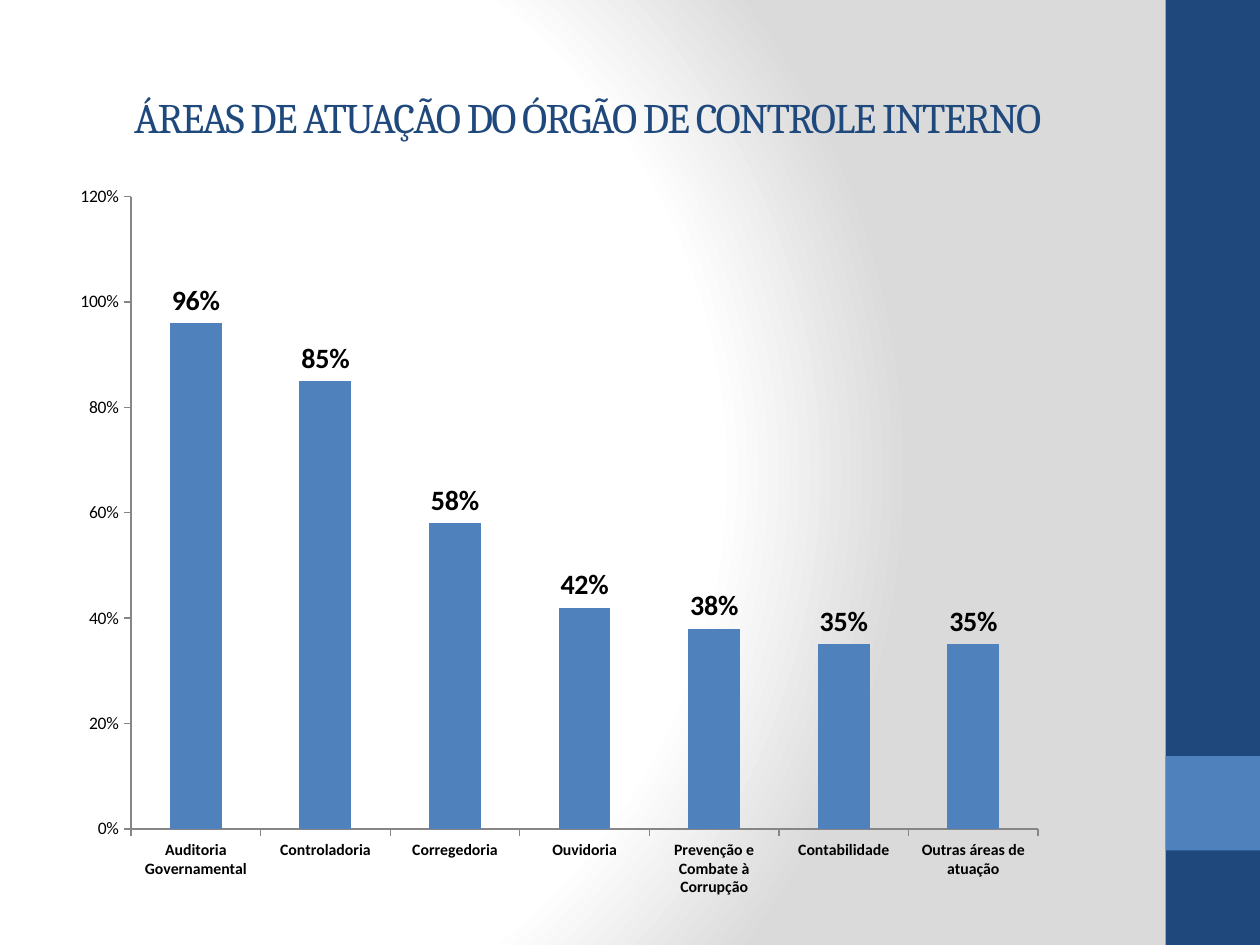
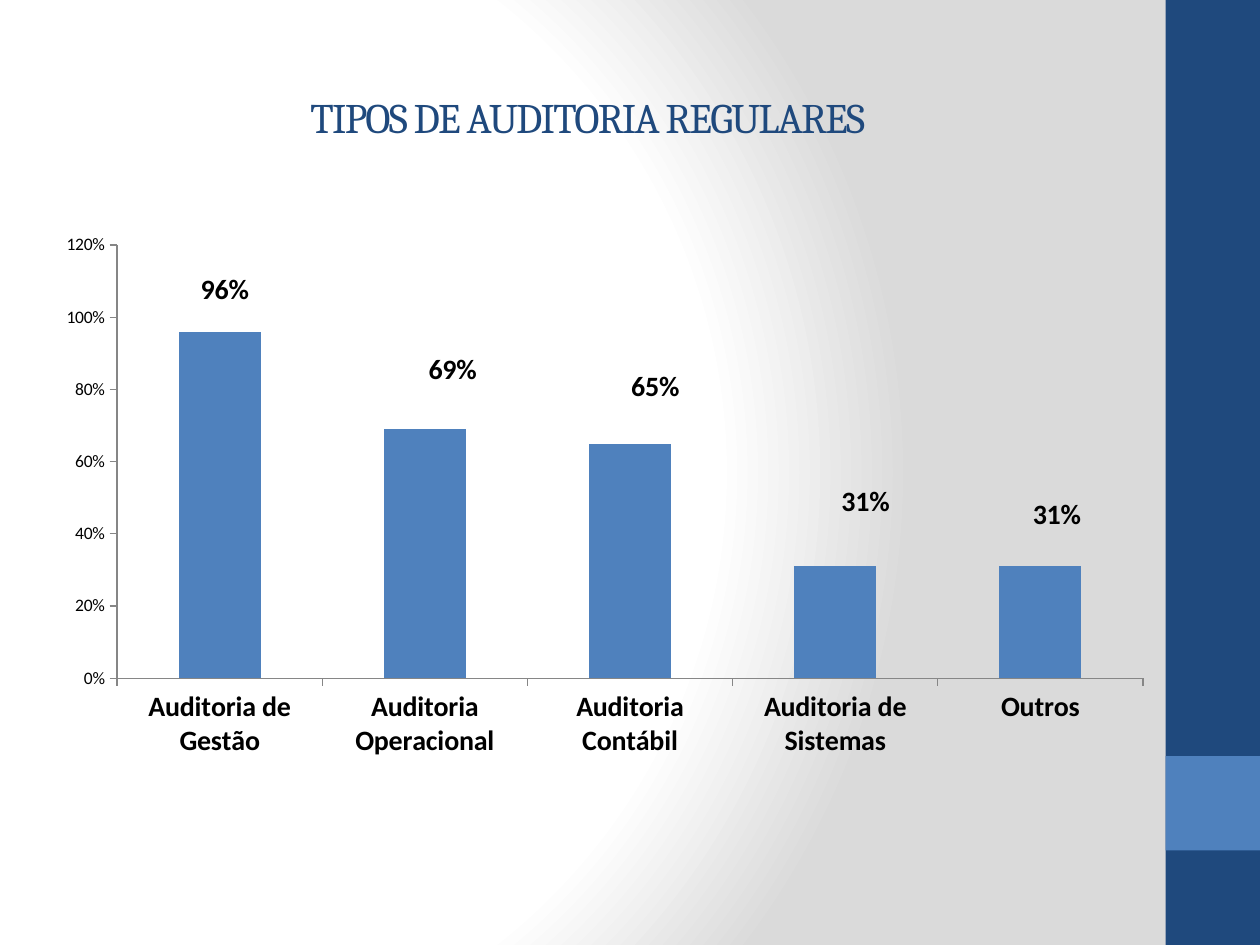
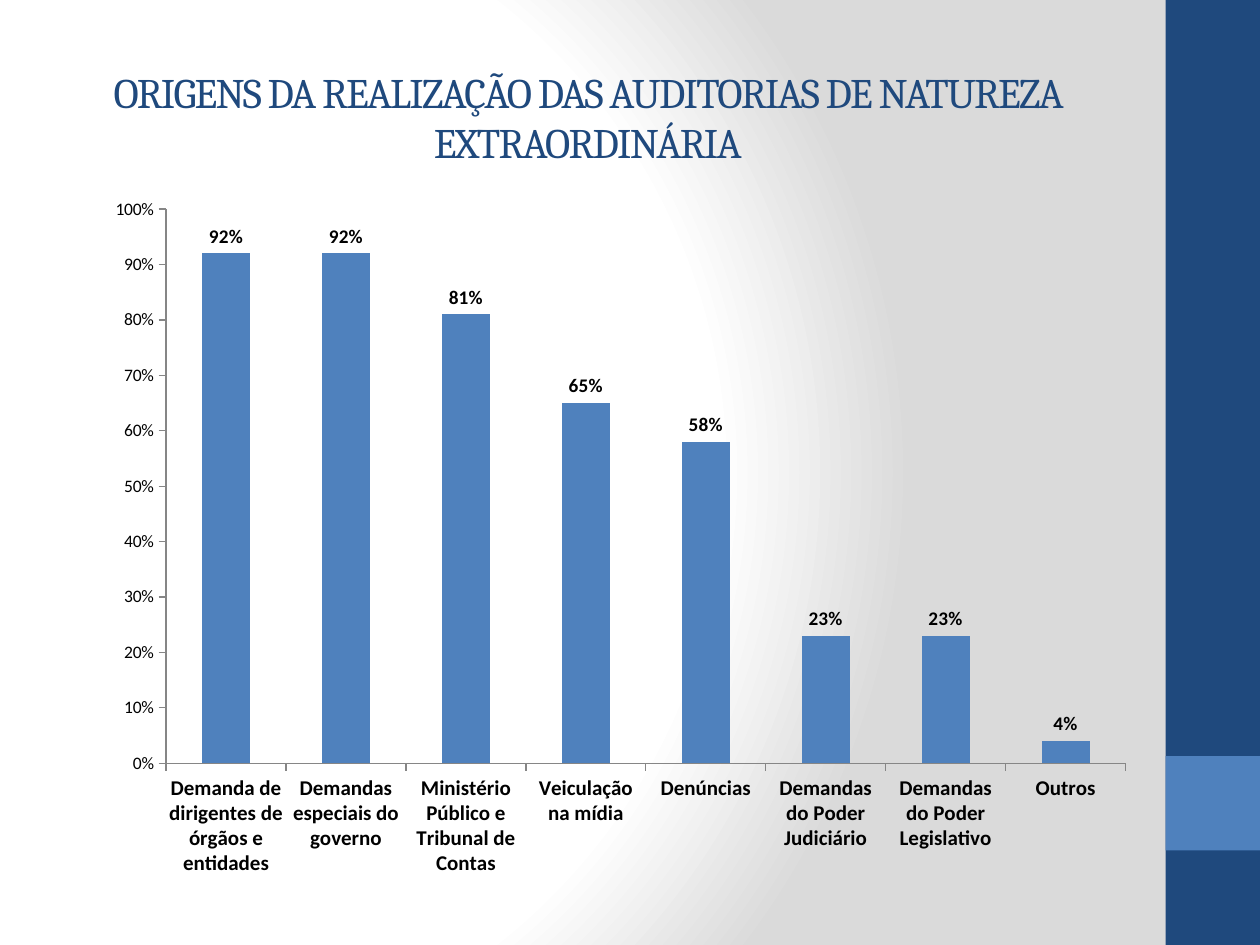
import pptx
import pptx.chart.data
import pptx.dml.color
import pptx.enum.chart
import pptx.enum.shapes
import pptx.enum.text
import pptx.oxml
import pptx.oxml.ns
import pptx.util
from dataclasses import dataclass

Inches = pptx.util.Inches
Pt = pptx.util.Pt
qn = pptx.oxml.ns.qn
NAMESPACES = pptx.oxml.ns.nsdecls


@dataclass(frozen=True)
class Theme:
    navy: str = "1F497D"
    blue: str = "4F81BD"
    axis: str = "868686"
    ink: str = "000000"
    paper: str = "FFFFFF"
    shade: str = "DADADA"
    title_font: str = "Cambria"
    chart_font: str = "Calibri"
    title_size: int = 24
    title_tracking: int = -100
    tick_size: int = 10


THEME = Theme()
SLIDE_SIZE = (10, 7.5)
TITLE_BOX = (0.5, 0.3, 8.33, 1.25)
BAND_BOX = (9.25, 0, 0.75, 7.5)

# Boxes, plot areas and label shifts are in inches; sizes are in points.
CHART_PAGES = [
    {
        "title": "ÁREAS DE ATUAÇÃO DO ÓRGÃO DE CONTROLE INTERNO",
        "box": (0.51, 1.39, 7.89, 5.83),
        "bars": {
            "Auditoria Governamental": 0.96,
            "Controladoria": 0.85,
            "Corregedoria": 0.58,
            "Ouvidoria": 0.42,
            "Prevenção e Combate à Corrupção": 0.38,
            "Contabilidade": 0.35,
            "Outras áreas de atuação": 0.35,
        },
        "scale": (1.2, 0.2),
        "category_size": 9,
        "label_size": 16,
        "plot_box": (0.53, 0.17, 7.2, 5.02),
    },
    {
        "title": "TIPOS DE AUDITORIA REGULARES",
        "box": (0.35, 1.78, 8.9, 4.33),
        "bars": {
            "Auditoria de Gestão": 0.96,
            "Auditoria Operacional": 0.69,
            "Auditoria Contábil": 0.65,
            "Auditoria de Sistemas": 0.31,
            "Outros": 0.31,
        },
        "scale": (1.2, 0.2),
        "category_size": 16,
        "label_size": 16,
        "label_shifts": [(0.04, -0.15), (0.22, -0.29), (0.2, -0.27),
                         (0.24, -0.33), (0.13, -0.23)],
    },
    {
        "title": "ORIGENS DA REALIZAÇÃO DAS AUDITORIAS DE NATUREZA EXTRAORDINÁRIA",
        "box": (0.75, 1.47, 8.35, 5.59),
        "bars": {
            "Demanda de dirigentes de órgãos e entidades": 0.92,
            "Demandas especiais do governo": 0.92,
            "Ministério Público e Tribunal de Contas": 0.81,
            "Veiculação na mídia": 0.65,
            "Denúncias": 0.58,
            "Demandas do Poder Judiciário": 0.23,
            "Demandas do Poder Legislativo": 0.23,
            "Outros": 0.04,
        },
        "scale": (1, 0.1),
        "category_size": 12,
        "label_size": 11,
    },
]


def apply(target, formats):
    for name, value in formats.items():
        setattr(target, name, value)


def color(code):
    return pptx.dml.color.RGBColor.from_string(code)


def inches(box):
    return [Inches(length) for length in box]


def style_font(font, size, face=THEME.chart_font, ink=THEME.ink, bold=False):
    apply(font, {"name": face, "size": Pt(size), "bold": bold})
    font.color.rgb = color(ink)


# Shared background
def set_background(master):
    stops = [(0, THEME.paper), (75, THEME.paper), (100, THEME.shade)]
    stop_xml = "".join(
        f'<a:gs pos="{place * 1000}"><a:srgbClr val="{code}"/></a:gs>'
        for place, code in stops)
    background = pptx.oxml.parse_xml(
        f'<p:bg {NAMESPACES("p", "a")}><p:bgPr><a:gradFill rotWithShape="1">'
        f'<a:gsLst>{stop_xml}</a:gsLst><a:path path="circle">'
        '<a:fillToRect l="20000" t="50000" r="100000" b="50000"/></a:path>'
        '</a:gradFill><a:effectLst/></p:bgPr></p:bg>')
    content = master.element.find(qn("p:cSld"))
    for old in content.findall(qn("p:bg")):
        content.remove(old)
    content.insert(0, background)


# Side band
def add_side_band(page, box):
    left, top, width, height = box
    parts = [
        (box, THEME.navy),
        ((left, top + 0.8 * height, width, 0.1 * height), THEME.blue),
    ]
    for part_box, code in parts:
        band = page.shapes.add_shape(
            pptx.enum.shapes.MSO_SHAPE.RECTANGLE, *inches(part_box))
        apply(band.shadow, {"inherit": False})
        band.fill.solid()
        band.fill.fore_color.rgb = color(code)
        band.line.fill.background()


# Title
def place_title(page, text, box):
    title = page.shapes.title
    apply(title, dict(zip(("left", "top", "width", "height"), inches(box))))
    frame = title.text_frame
    apply(frame, {"text": text, "word_wrap": True,
                  "vertical_anchor": pptx.enum.text.MSO_ANCHOR.MIDDLE})
    para = frame.paragraphs[0]
    para.alignment = pptx.enum.text.PP_ALIGN.CENTER
    style_font(para.runs[0].font, THEME.title_size, THEME.title_font, THEME.navy)
    for properties in title.element.iter(qn("a:rPr")):
        properties.set("spc", str(THEME.title_tracking))


# Chart
def manual_layout(fractions, inner=False):
    settings = [("layoutTarget", "inner"), ("xMode", "edge"),
                ("yMode", "edge")] if inner else []
    settings += zip("xywh", fractions)
    body = "".join(f'<c:{tag} val="{value}"/>' for tag, value in settings)
    return pptx.oxml.parse_xml(
        f'<c:layout {NAMESPACES("c")}><c:manualLayout>{body}'
        '</c:manualLayout></c:layout>')


def place_plot(chart, plot_box, width, height):
    area = chart.element.find(".//" + qn("c:plotArea"))
    for old in area.findall(qn("c:layout")):
        area.remove(old)
    x, y, w, h = plot_box
    area.insert(0, manual_layout(
        (x / width, y / height, w / width, h / height), inner=True))


def shift_labels(chart, shifts, size, width, height):
    series = chart.plots[0].series[0]
    for index in range(len(shifts)):
        label = series.points[index].data_label
        label.position = pptx.enum.chart.XL_LABEL_POSITION.OUTSIDE_END
        style_font(label.font, size, bold=True)
    for entry, (x, y) in zip(chart.element.iter(qn("c:dLbl")), shifts):
        entry.insert(1, manual_layout((x / width, y / height)))
    for leader in chart.element.iter(qn("c:showLeaderLines")):
        leader.set("val", "0")


def style_axis(axis, size, bold):
    apply(axis, {"has_major_gridlines": False,
                 "major_tick_mark": pptx.enum.chart.XL_TICK_MARK.OUTSIDE,
                 "minor_tick_mark": pptx.enum.chart.XL_TICK_MARK.NONE})
    axis.format.line.color.rgb = color(THEME.axis)
    axis.format.line.width = Pt(0.75)
    style_font(axis.tick_labels.font, size, bold=bold)


def add_bar_chart(page, box, bars, scale, category_size, label_size,
                  plot_box=None, label_shifts=()):
    data = pptx.chart.data.CategoryChartData(number_format="0%")
    data.categories = list(bars)
    data.add_series("Series 1", list(bars.values()))
    chart = page.shapes.add_chart(
        pptx.enum.chart.XL_CHART_TYPE.COLUMN_CLUSTERED, *inches(box), data).chart
    apply(chart, {"has_legend": False, "has_title": False})
    style_font(chart.font, THEME.tick_size)

    # Axes
    style_axis(chart.category_axis, category_size, True)
    style_axis(chart.value_axis, THEME.tick_size, False)
    maximum, step = scale
    apply(chart.value_axis, {"minimum_scale": 0, "maximum_scale": maximum,
                             "major_unit": step})
    number_format = {"number_format": "0%", "number_format_is_linked": False}
    apply(chart.value_axis.tick_labels, number_format)

    # Bars and their labels
    plot = chart.plots[0]
    apply(plot, {"gap_width": 150, "vary_by_categories": False})
    series = plot.series[0]
    series.format.fill.solid()
    series.format.fill.fore_color.rgb = color(THEME.blue)
    labels = series.data_labels
    apply(labels, number_format | {
        "show_value": True,
        "position": pptx.enum.chart.XL_LABEL_POSITION.OUTSIDE_END})
    style_font(labels.font, label_size, bold=True)

    width, height = box[2:]
    if plot_box:
        place_plot(chart, plot_box, width, height)
    shift_labels(chart, label_shifts, label_size, width, height)


def add_chart_page(deck, title, **chart_parts):
    page = deck.slides.add_slide(deck.slide_layouts[5])
    add_side_band(page, BAND_BOX)
    place_title(page, title, TITLE_BOX)
    add_bar_chart(page, **chart_parts)


def main():
    deck = pptx.Presentation()
    apply(deck, dict(zip(("slide_width", "slide_height"), inches(SLIDE_SIZE))))
    set_background(deck.slide_master)
    for parts in CHART_PAGES:
        add_chart_page(deck, **parts)
    deck.save("out.pptx")


if __name__ == "__main__":
    main()
